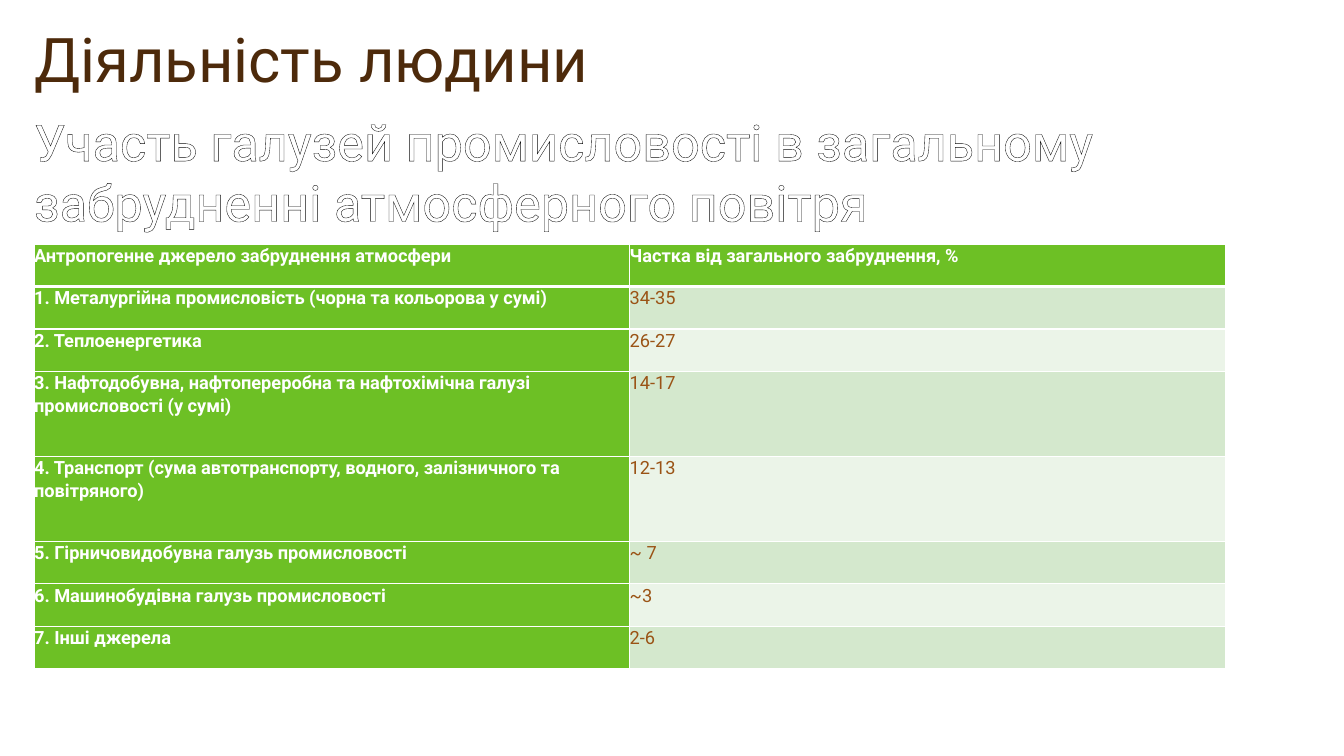
from dataclasses import dataclass

from lxml.etree import SubElement
from pptx import Presentation
from pptx.dml.color import RGBColor
from pptx.enum.text import MSO_ANCHOR
from pptx.oxml.ns import qn
from pptx.util import Cm, Pt


@dataclass(frozen=True)
class Theme:
    font: str = "Roboto"
    brown: str = "4D2A0B"
    rust: str = "9A5315"
    green: str = "6DC025"
    bands: tuple = ("D4E8CD", "EBF4E8")
    white: str = "FFFFFF"
    outline: str = "0D0D0D"
    title_size: int = 44
    subtitle_size: int = 36
    table_size: int = 13


HEADINGS = ("Антропогенне джерело забруднення атмосфери",
            "Частка від загального забруднення, %")
SOURCES = [
    ("1. Металургійна промисловість (чорна та кольорова у сумі)", "34-35"),
    ("2. Теплоенергетика", "26-27"),
    ("3. Нафтодобувна, нафтопереробна та нафтохімічна галузі "
     "промисловості (у сумі)", "14-17"),
    ("4. Транспорт (сума автотранспорту, водного, залізничного та "
     "повітряного)", "12-13"),
    ("5. Гірничовидобувна галузь промисловості", "~ 7"),
    ("6. Машинобудівна галузь промисловості", "~3"),
    ("7. Інші джерела", "2-6"),
]
ROW_HEIGHT = 1.07
TALL_ROWS = (3, 4)
COLUMN_WIDTH = 15.01


def add_line(parent, tag, color, points):
    """Append a solid DrawingML line; used for cell borders and text outlines."""
    line = SubElement(parent, qn(tag), w=str(Pt(points)))
    fill = SubElement(line, qn("a:solidFill"))
    SubElement(fill, qn("a:srgbClr"), val=color)
    return line


class SlideBuilder:
    def __init__(self, slide, theme):
        self.slide = slide
        self.theme = theme

    def style(self, paragraph, size, color, bold=False):
        for run in paragraph.runs:
            font = run.font
            font.name, font.size, font.bold = self.theme.font, Pt(size), bold
            font.color.rgb = RGBColor.from_string(color)

    def text(self, words, left, top, width, height, size, color, anchor):
        frame = self.slide.shapes.add_textbox(
            Cm(left), Cm(top), Cm(width), Cm(height)).text_frame
        frame.word_wrap = True
        frame.vertical_anchor = anchor
        frame.text = words
        self.style(frame.paragraphs[0], size, color)
        return frame

    def title(self, words):
        frame = self.text(words, 0.61, -2.54, 19.05, 5.08,
                          self.theme.title_size, self.theme.brown,
                          MSO_ANCHOR.BOTTOM)
        frame.paragraphs[0].line_spacing = 0.9

    def subtitle(self, words):
        frame = self.text(words, 0.61, 2.54, 31.09, 4.11,
                          self.theme.subtitle_size, self.theme.white,
                          MSO_ANCHOR.TOP)
        frame.margin_top = Cm(0.25)
        properties = frame.paragraphs[0].runs[0].font._element
        properties.insert(
            0, add_line(properties, "a:ln", self.theme.outline, 0.75))

    def cell(self, cell, words, fill, color, bold, top_border, bottom_border):
        cell.margin_left = cell.margin_right = 0
        cell.margin_top = cell.margin_bottom = 0
        cell.text = words
        paragraph = cell.text_frame.paragraphs[0]
        paragraph.line_spacing = 1.07
        paragraph.space_after = Pt(8)
        self.style(paragraph, self.theme.table_size, color, bold)
        properties = cell._tc.get_or_add_tcPr()
        borders = {"a:lnL": 1, "a:lnR": 1,
                   "a:lnT": top_border, "a:lnB": bottom_border}
        for tag, points in borders.items():
            add_line(properties, tag, self.theme.white, points)
        cell.fill.solid()
        cell.fill.fore_color.rgb = RGBColor.from_string(fill)

    def table(self, headings, sources):
        theme = self.theme
        rows = [headings, *sources]
        heights = [ROW_HEIGHT * (2 if i in TALL_ROWS else 1)
                   for i in range(len(rows))]
        table = self.slide.shapes.add_table(
            len(rows), len(headings), Cm(0.86), Cm(6.15),
            Cm(COLUMN_WIDTH * len(headings)), Cm(sum(heights))).table
        table.first_col = True
        for column in table.columns:
            column.width = Cm(COLUMN_WIDTH)
        for i, (row, height) in enumerate(zip(rows, heights)):
            table.rows[i].height = Cm(height)
            for j, words in enumerate(row):
                strong = i == 0 or j == 0
                self.cell(table.cell(i, j), words,
                          fill=theme.green if strong else theme.bands[(i - 1) % 2],
                          color=theme.white if strong else theme.rust,
                          bold=strong,
                          top_border=3 if i == 1 else 1,
                          bottom_border=3 if i == 0 else 1)


def main():
    presentation = Presentation()
    presentation.slide_width = Cm(33.87)
    presentation.slide_height = Cm(19.05)
    slide = presentation.slides.add_slide(presentation.slide_layouts[6])
    builder = SlideBuilder(slide, Theme())
    builder.title("Діяльність людини")
    builder.table(HEADINGS, SOURCES)
    builder.subtitle("Участь галузей промисловості в загальному "
                     "забрудненні атмосферного повітря")
    presentation.save("out.pptx")


if __name__ == "__main__":
    main()
